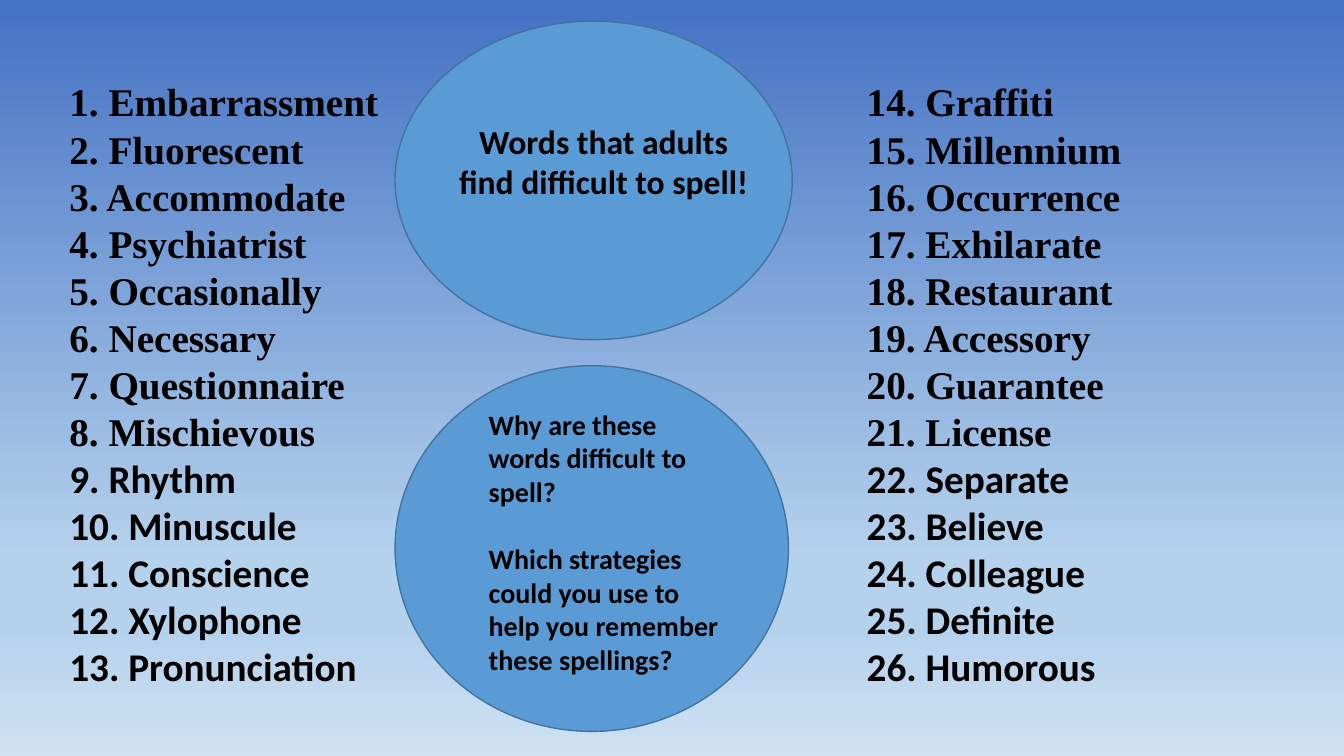
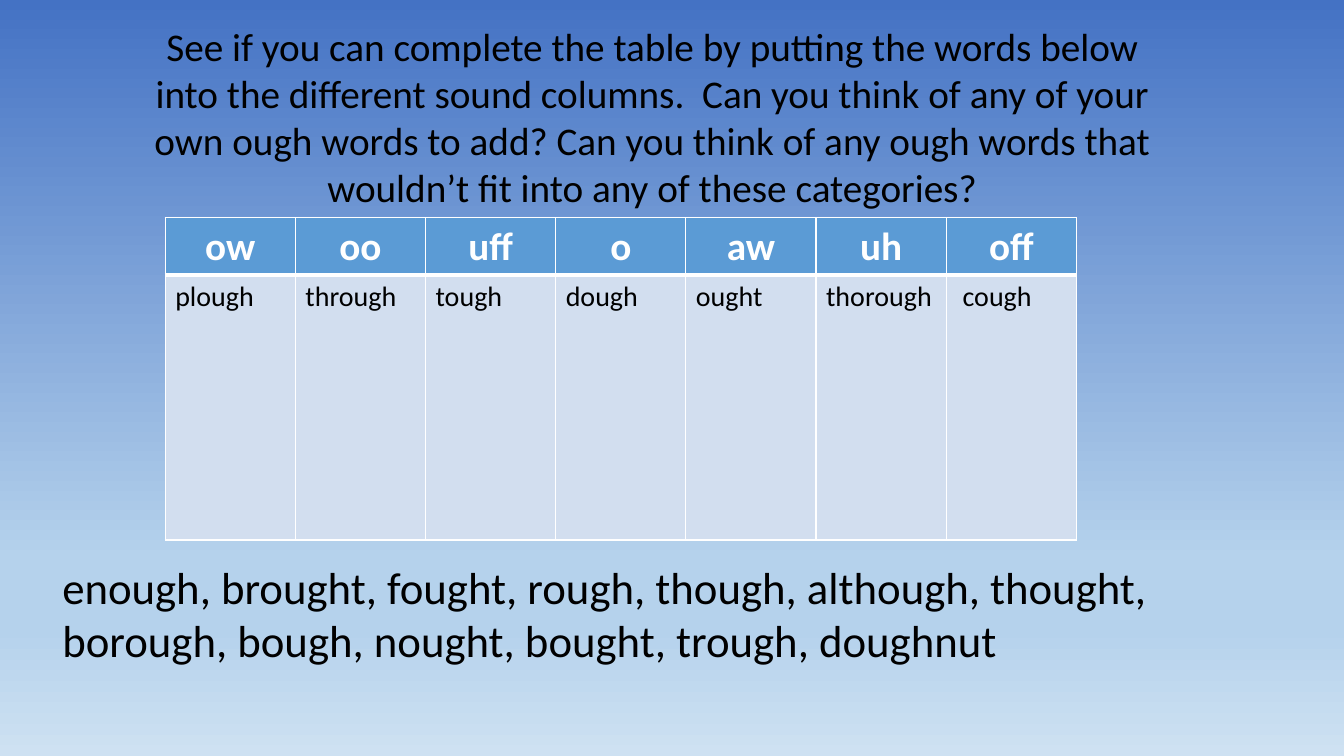
from lxml.etree import SubElement
from pptx import Presentation
from pptx.dml.color import RGBColor as RGB
from pptx.enum.shapes import MSO_SHAPE as SHAPE
from pptx.enum.text import PP_ALIGN as ALIGN
from pptx.oxml.ns import qn
from pptx.util import Pt

COLORS = {
    "black": "000000", "white": "FFFFFF", "blue": "5B9BD5", "edge": "43739E",
    "cell": "D2DEEF", "sky": "4472C4", "haze": "B5D2EC", "horizon": "CEE1F2",
}
SKY_STOPS = [(0, "sky"), (74, "haze"), (83, "haze"), (100, "horizon")]
SANS, SERIF = "Calibri", "Times New Roman"

FIRST_WORDS = ["Embarrassment", "Fluorescent", "Accommodate", "Psychiatrist",
               "Occasionally", "Necessary", "Questionnaire", "Mischievous",
               "Rhythm", "Minuscule", "Conscience", "Xylophone", "Pronunciation"]
LAST_WORDS = ["Graffiti", "Millennium", "Occurrence", "Exhilarate", "Restaurant",
              "Accessory", "Guarantee", "License", "Separate", "Believe",
              "Colleague", "Definite", "Humorous"]
SERIF_COUNT = 8
SOUNDS = {"ow": "plough", "oo": "through", "uff": "tough", "o": "dough",
          "aw": "ought", "uh": "thorough", "off": " cough"}


def rgb(name):
    return RGB.from_string(COLORS[name])


def write(p, text, size=28, font=SANS, color="black", bold=False,
          align=ALIGN.LEFT, before=0):
    p.alignment = align
    p.space_before = Pt(before)
    r = p.add_run()
    r.text = text
    r.font.size, r.font.name, r.font.bold = Pt(size), font, bold
    r.font.color.rgb = rgb(color)


def set_borders(cell, bottom=1):
    """Draw white cell borders, with the bottom one as thick as given."""
    tc_pr = cell._tc.get_or_add_tcPr()
    for i, side in enumerate("LRTB"):
        width = bottom if side == "B" else 1
        ln = SubElement(tc_pr, qn(f"a:ln{side}"), w=str(Pt(width)))
        fill = SubElement(ln, qn("a:solidFill"))
        SubElement(fill, qn("a:srgbClr"), val=COLORS["white"])
        tc_pr.insert(i, ln)


class Deck:
    def __init__(self):
        self.prs = Presentation()
        self.prs.slide_width, self.prs.slide_height = Pt(960), Pt(540)
        self.s = None

    def slide(self):
        """Start a blank slide with the sky gradient behind it."""
        self.s = self.prs.slides.add_slide(self.prs.slide_layouts[6])
        fill = self.s.background.fill
        fill.gradient()
        fill.gradient_angle = 270
        stops = next(self.s.element.iter(qn("a:gsLst")))
        for old in list(stops):
            stops.remove(old)
        for pos, name in SKY_STOPS:
            gs = SubElement(stops, qn("a:gs"), pos=str(pos * 1000))
            SubElement(gs, qn("a:srgbClr"), val=COLORS[name])

    def ellipse(self, *box):
        sp = self.s.shapes.add_shape(SHAPE.OVAL, *map(Pt, box))
        sp.shadow.inherit = False
        sp.fill.solid()
        sp.fill.fore_color.rgb = rgb("blue")
        sp.line.color.rgb = rgb("edge")
        sp.line.width = Pt(1)

    def text(self, box, *paragraphs, **style):
        """Add a text box; each paragraph is a text and its own format."""
        tf = self.s.shapes.add_textbox(*map(Pt, box)).text_frame
        tf.word_wrap = True
        for i, (text, own) in enumerate(paragraphs):
            p = tf.add_paragraph() if i else tf.paragraphs[0]
            write(p, text, **{**style, **own})

    def word_list(self, left, words, start):
        lines = [(f"{start + i}. {word}", {"font": SERIF if i < SERIF_COUNT else SANS})
                 for i, word in enumerate(words)]
        self.text((left, 52, 250, 470), *lines, bold=True)

    def table(self, left, top, col_width, row_heights, columns):
        """Add a table from a dict of heading to the word below it."""
        n = len(columns)
        tbl = self.s.shapes.add_table(2, n, Pt(left), Pt(top), Pt(col_width * n),
                                      Pt(sum(row_heights))).table
        for row, height in zip(tbl.rows, row_heights):
            row.height = Pt(height)
        head = dict(size=28, color="white", bold=True, align=ALIGN.CENTER)
        for c, pair in enumerate(columns.items()):
            tbl.columns[c].width = Pt(col_width)
            formats = [("blue", 3, head), ("cell", 1, {"size": 20})]
            for r, (fill, bottom, style) in enumerate(formats):
                cell = tbl.cell(r, c)
                cell.fill.solid()
                cell.fill.fore_color.rgb = rgb(fill)
                set_borders(cell, bottom)
                write(cell.text_frame.paragraphs[0], pair[r], **style)


def spelling_slide(deck):
    deck.slide()
    deck.ellipse(282.2, 15.1, 283.7, 227.5)
    deck.text((318.2, 82.8, 226, 65.5),
              ("Words that adults find difficult to spell!", {}),
              size=24, bold=True, align=ALIGN.CENTER)
    deck.word_list(42.5, FIRST_WORDS, 1)
    deck.word_list(612, LAST_WORDS, 1 + len(FIRST_WORDS))
    deck.ellipse(282.2, 261.2, 281, 261.2)
    deck.text((342, 287.3, 180.7, 201),
              ("Why are these words difficult to spell?", {}),
              ("Which strategies could you use to help you remember these spellings?",
               {"before": 24}),
              size=20, bold=True)


def sounds_slide(deck):
    deck.slide()
    deck.text((37.4, 396, 888, 85),
              ("enough, brought, fought, rough, though, although, thought, "
               "borough, bough, nought, bought, trough, doughnut", {}), size=32)
    deck.table(118, 155.5, 93, (40.7, 189.3), SOUNDS)
    deck.text((91.4, 12.2, 748.8, 143.3),
              ("See if you can complete the table by putting the words below into "
               "the different sound columns.  Can you think of any of your own ough "
               "words to add? Can you think of any ough words that wouldn’t fit into "
               "any of these categories?", {}), align=ALIGN.CENTER)


def main():
    deck = Deck()
    spelling_slide(deck)
    sounds_slide(deck)
    deck.prs.save("out.pptx")


if __name__ == "__main__":
    main()
